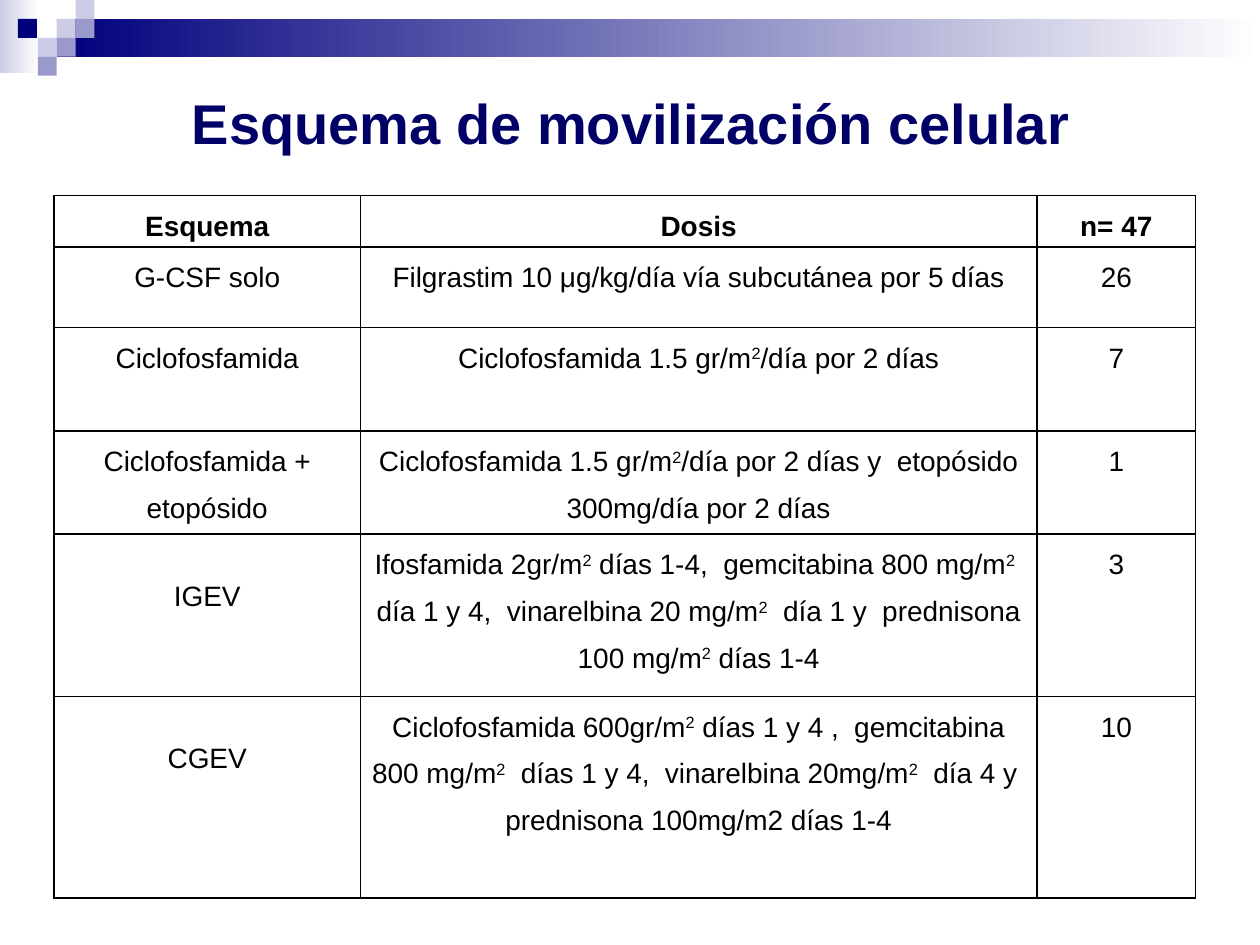
from dataclasses import dataclass

from pptx import Presentation
from pptx.dml.color import RGBColor
from pptx.enum.shapes import MSO_SHAPE
from pptx.enum.text import MSO_ANCHOR, PP_ALIGN
from pptx.oxml import parse_xml
from pptx.oxml.ns import nsdecls
from pptx.util import Inches, Pt

UNIT = 0.15
NAVY, LILAC, MAUVE, WHITE, BLACK = "00007D", "CCCCE6", "9999CC", "FFFFFF", "000000"


@dataclass
class Block:
    """A rectangle on the header grid, fading to white if asked."""
    col: float
    row: float
    wide: float
    high: float
    tint: str
    fade: bool = False


@dataclass
class Scheme:
    """One row of the table; drop lowers its name."""
    name: str
    dose: str
    count: str
    high: float
    drop: float = 0
    bold: bool = False


BLOCKS = [
    Block(0, 0, 2.07, 3.87, LILAC, True),
    Block(3, 1, 63.67, 2, NAVY, True),
    *(Block(col, row, 1, 1, tint) for col, row, tint in [
        (3, 1, LILAC), (4, 0, LILAC), (4, 1, MAUVE), (2, 2, LILAC),
        (0.95, 1, NAVY), (3, 2, MAUVE), (2, 3, MAUVE)]),
]
WIDTHS = [2.43, 5.37, 1.26]
SCHEMES = [
    Scheme("Esquema", "Dosis", "n= 47", 0.41, bold=True),
    Scheme("G-CSF solo", "Filgrastim 10 μg/kg/día vía subcutánea por 5 días", "26", 0.64),
    Scheme("Ciclofosfamida", "Ciclofosfamida 1.5 gr/m²/día por 2 días", "7", 0.82),
    Scheme("Ciclofosfamida + etopósido",
           "Ciclofosfamida 1.5 gr/m²/día por 2 días y  etopósido 300mg/día por 2 días",
           "1", 0.82),
    Scheme("IGEV",
           "Ifosfamida 2gr/m² días 1-4,  gemcitabina 800 mg/m²  día 1 y 4,  "
           "vinarelbina 20 mg/m²  día 1 y  prednisona 100 mg/m² días 1-4",
           "3", 1.29, 0.25),
    Scheme("CGEV",
           "Ciclofosfamida 600gr/m² días 1 y 4 ,  gemcitabina 800 mg/m²  días 1 y 4,  "
           "vinarelbina 20mg/m²  día 4 y  prednisona 100mg/m2 días 1-4",
           "10", 1.6, 0.25),
]


def shade(tint: str) -> RGBColor:
    """Turn a hex string into a colour."""
    return RGBColor.from_string(tint)


def style(run, size: int, tint: str, bold: bool) -> None:
    """Set the look of a run."""
    font = run.font
    font.name, font.size, font.bold = "Arial", Pt(size), bold
    font.color.rgb = shade(tint)


def draw_block(slide, block: Block) -> None:
    """Draw one header rectangle."""
    spot = [Inches(n * UNIT) for n in (block.col, block.row, block.wide, block.high)]
    shape = slide.shapes.add_shape(MSO_SHAPE.RECTANGLE, *spot)
    shape.shadow.inherit = False
    shape.line.fill.background()
    if block.fade:
        shape.fill.gradient()
        shape.fill.gradient_angle = 0
        for stop, tint in zip(shape.fill.gradient_stops, (block.tint, WHITE)):
            stop.color.rgb = shade(tint)
    else:
        shape.fill.solid()
        shape.fill.fore_color.rgb = shade(block.tint)


def draw_title(slide, text: str) -> None:
    """Draw the centred title."""
    box = slide.shapes.add_textbox(Inches(0.51), Inches(0.44), Inches(9), Inches(1.05))
    frame = box.text_frame
    frame.word_wrap = True
    frame.vertical_anchor = MSO_ANCHOR.MIDDLE
    frame.text = text
    para = frame.paragraphs[0]
    para.alignment = PP_ALIGN.CENTER
    style(para.runs[0], 32, "000066", True)


def frame_cell(cell) -> None:
    """Give a cell thin black borders and no fill."""
    cell.fill.background()
    props = cell._tc.get_or_add_tcPr()
    for spot, side in enumerate(("lnL", "lnR", "lnT", "lnB")):
        props.insert(spot, parse_xml(
            f'<a:{side} {nsdecls("a")} w="12700"><a:solidFill>'
            f'<a:srgbClr val="{BLACK}"/></a:solidFill></a:{side}>'))


def fill_cell(cell, text: str, drop: float, bold: bool) -> None:
    """Write a cell, raising each ² as a superscript 2."""
    frame_cell(cell)
    cell.margin_left = cell.margin_right = Inches(0.07)
    cell.margin_top, cell.margin_bottom = Inches(drop), 0
    para = cell.text_frame.paragraphs[0]
    para.alignment, para.line_spacing = PP_ALIGN.CENTER, 1.5
    for spot, part in enumerate(text.split("²")):
        if spot:
            power = para.add_run()
            power.text = "2"
            style(power, 16, BLACK, bold)
            power._r.get_or_add_rPr().set("baseline", "30000")
        run = para.add_run()
        run.text = part
        style(run, 16, BLACK, bold)


def draw_table(slide, rows: list[Scheme]) -> None:
    """Draw the table of schemes."""
    high = sum(row.high for row in rows)
    table = slide.shapes.add_table(
        len(rows), len(WIDTHS), Inches(0.43), Inches(1.55),
        Inches(sum(WIDTHS)), Inches(high)).table
    table.first_row = table.horz_banding = False
    for col, wide in zip(table.columns, WIDTHS):
        col.width = Inches(wide)
    for line, row in zip(table.rows, rows):
        line.height = Inches(row.high)
        texts = (row.name, row.dose, row.count)
        for cell, text, drop in zip(line.cells, texts, (row.drop, 0, 0)):
            fill_cell(cell, text, drop, row.bold)


def main() -> None:
    """Build and save the slide."""
    deck = Presentation()
    deck.slide_width, deck.slide_height = Inches(10), Inches(7.5)
    slide = deck.slides.add_slide(deck.slide_layouts[6])
    for block in BLOCKS:
        draw_block(slide, block)
    draw_title(slide, "Esquema de movilización celular")
    draw_table(slide, SCHEMES)
    deck.save("out.pptx")


if __name__ == "__main__":
    main()
